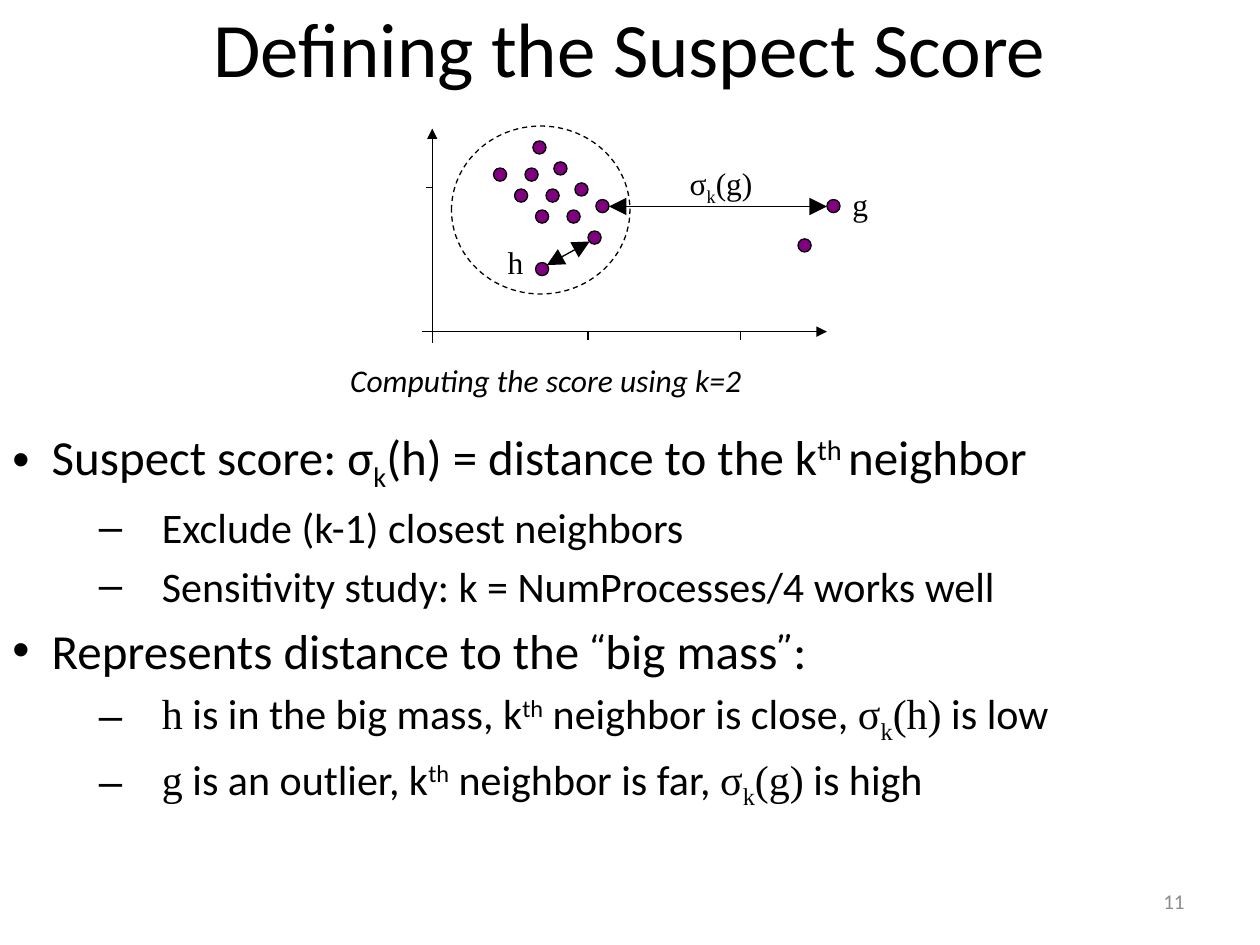
from lxml.etree import SubElement
from pptx import Presentation
from pptx.dml.color import RGBColor
from pptx.enum.dml import MSO_LINE
from pptx.enum.shapes import MSO_CONNECTOR, MSO_SHAPE
from pptx.enum.text import MSO_ANCHOR, PP_ALIGN
from pptx.oxml.ns import qn
from pptx.util import Pt

BLACK, PURPLE, GRAY = "000000", "800080", "8C8C8C"
SANS, SERIF, COMIC = "Calibri", "Times New Roman", "Comic Neue"
SUB, SUP = -25, 30
DOT = 7.5

DOTS = [
    (304.5, 80.5), (472.5, 114), (316.5, 92.5), (328.5, 104.5),
    (340.5, 114), (300, 96), (312, 108), (324, 120), (336, 132),
    (282, 96), (294, 108), (306, 120), (306, 150), (456, 136.5),
]
TICKS = [(336, 189, 336, 194.5), (423, 189, 423, 194.5), (247, 107, 243.5, 107)]
AXES = [(247, 196, 247, 73.5), (241, 189.5, 472.5, 189.5)]
DISTANCES = [(472.5, 118, 348, 118), (312.5, 151.5, 337, 138)]


def color(hex_code):
    return RGBColor.from_string(hex_code)


def add_ellipse(slide, x, y, w, h, fill=None, dash=None):
    sp = slide.shapes.add_shape(MSO_SHAPE.OVAL, Pt(x), Pt(y), Pt(w), Pt(h))
    sp.shadow.inherit = False
    if fill:
        sp.fill.solid()
        sp.fill.fore_color.rgb = color(fill)
    else:
        sp.fill.background()
    sp.line.color.rgb = color(BLACK)
    sp.line.width = Pt(0.75)
    if dash:
        sp.line.dash_style = dash


def add_line(slide, x1, y1, x2, y2, ends=(), size="med"):
    cx = slide.shapes.add_connector(
        MSO_CONNECTOR.STRAIGHT, Pt(x1), Pt(y1), Pt(x2), Pt(y2))
    cx.line.color.rgb = color(BLACK)
    cx.line.width = Pt(0.75)
    ln = cx.line._get_or_add_ln()
    for end in ends:
        SubElement(ln, qn(f"a:{end}"), type="triangle", w=size, len=size)
    SubElement(cx._element.spPr, qn("a:effectLst"))


def add_run(p, text, size=18, font=SANS, hex_code=BLACK, base=0, italic=False):
    r = p.add_run()
    r.text = text
    r.font.size = Pt(size)
    r.font.name = font
    r.font.color.rgb = color(hex_code)
    if italic:
        r.font.italic = True
    if base:
        r.font._element.set("baseline", str(base * 1000))


def add_text_frame(slide, x, y, w, h, anchor=MSO_ANCHOR.TOP):
    tf = slide.shapes.add_textbox(Pt(x), Pt(y), Pt(w), Pt(h)).text_frame
    tf.word_wrap = True
    tf.vertical_anchor = anchor
    return tf


def add_label(slide, box, *parts, align=PP_ALIGN.LEFT, anchor=MSO_ANCHOR.TOP, **fmt):
    p = add_text_frame(slide, *box, anchor=anchor).paragraphs[0]
    p.alignment = align
    for text, base in parts:
        add_run(p, text, base=base, **fmt)


def add_bullet(p, level, parts):
    size, margin, indent, char = [(28, 22.5, -22.5, "•"), (24, 85.5, -36, "–")][level]
    p.level = level
    p.space_before = Pt(size * 0.2)
    pPr = p._p.get_or_add_pPr()
    pPr.set("marL", str(Pt(margin)))
    pPr.set("indent", str(Pt(indent)))
    SubElement(pPr, qn("a:buFont"), typeface="Arial")
    SubElement(pPr, qn("a:buChar"), char=char)
    for text, font, base in parts:
        add_run(p, text, size=size, font=font, base=base)


def outlier_line(name, place, nearness, level):
    return [
        (name, SERIF, 0), (f" is {place}, k", SANS, 0), ("th", SANS, SUP),
        (f" neighbor is {nearness}, ", SANS, 0), ("σ", SERIF, 0),
        ("k", SERIF, SUB), (f"({name})", SERIF, 0), (f" is {level}", SANS, 0),
    ]


def add_bullets(slide):
    tf = add_text_frame(slide, 0, 240, 720, 258)
    bullets = [
        (0, [("Suspect score: σ", SANS, 0), ("k", SANS, SUB),
             ("(h) = distance to the k", SANS, 0), ("th ", SANS, SUP),
             ("neighbor", SANS, 0)]),
        (1, [("Exclude (k-1) closest neighbors", SANS, 0)]),
        (1, [("Sensitivity study: k = NumProcesses/4 works well", SANS, 0)]),
        (0, [("Represents distance to the ", SANS, 0), ("“", COMIC, 0),
             ("big mass", SANS, 0), ("”", COMIC, 0), (":", SANS, 0)]),
        (1, outlier_line("h", "in the big mass", "close", "low")),
        (1, outlier_line("g", "an outlier", "far", "high")),
    ]
    for i, (level, parts) in enumerate(bullets):
        p = tf.add_paragraph() if i else tf.paragraphs[0]
        add_bullet(p, level, parts)


def add_diagram(slide):
    add_ellipse(slide, 258, 72, 102, 96, dash=MSO_LINE.DASH)
    for tick in TICKS:
        add_line(slide, *tick)
    for axis in AXES:
        add_line(slide, *axis, ends=["tailEnd"])
    for x, y in DOTS:
        add_ellipse(slide, x, y, DOT, DOT, fill=PURPLE)
    for distance in DISTANCES:
        add_line(slide, *distance, ends=["headEnd", "tailEnd"], size="lg")
    add_label(slide, (480, 102, 30, 29.5), ("g", 0), font=SERIF)
    add_label(slide, (283, 135.5, 30, 29.5), ("h", 0), font=SERIF)
    add_label(slide, (387, 90, 63, 29.5), ("σ", 0), ("k", SUB), ("(g)", 0), font=SERIF)
    add_label(slide, (193, 203, 274, 29.5), ("Computing the score using k=2", 0), italic=True)


def main():
    prs = Presentation()
    prs.slide_width, prs.slide_height = Pt(720), Pt(540)
    slide = prs.slides.add_slide(prs.slide_layouts[6])
    add_label(slide, (0, -18.5, 720, 90), ("Defining the Suspect Score", 0),
              align=PP_ALIGN.CENTER, anchor=MSO_ANCHOR.MIDDLE, size=44)
    add_bullets(slide)
    add_diagram(slide)
    add_label(slide, (516, 500.5, 168, 29), ("11", 0), align=PP_ALIGN.RIGHT,
              anchor=MSO_ANCHOR.MIDDLE, size=12, hex_code=GRAY)
    prs.save("out.pptx")


if __name__ == "__main__":
    main()
